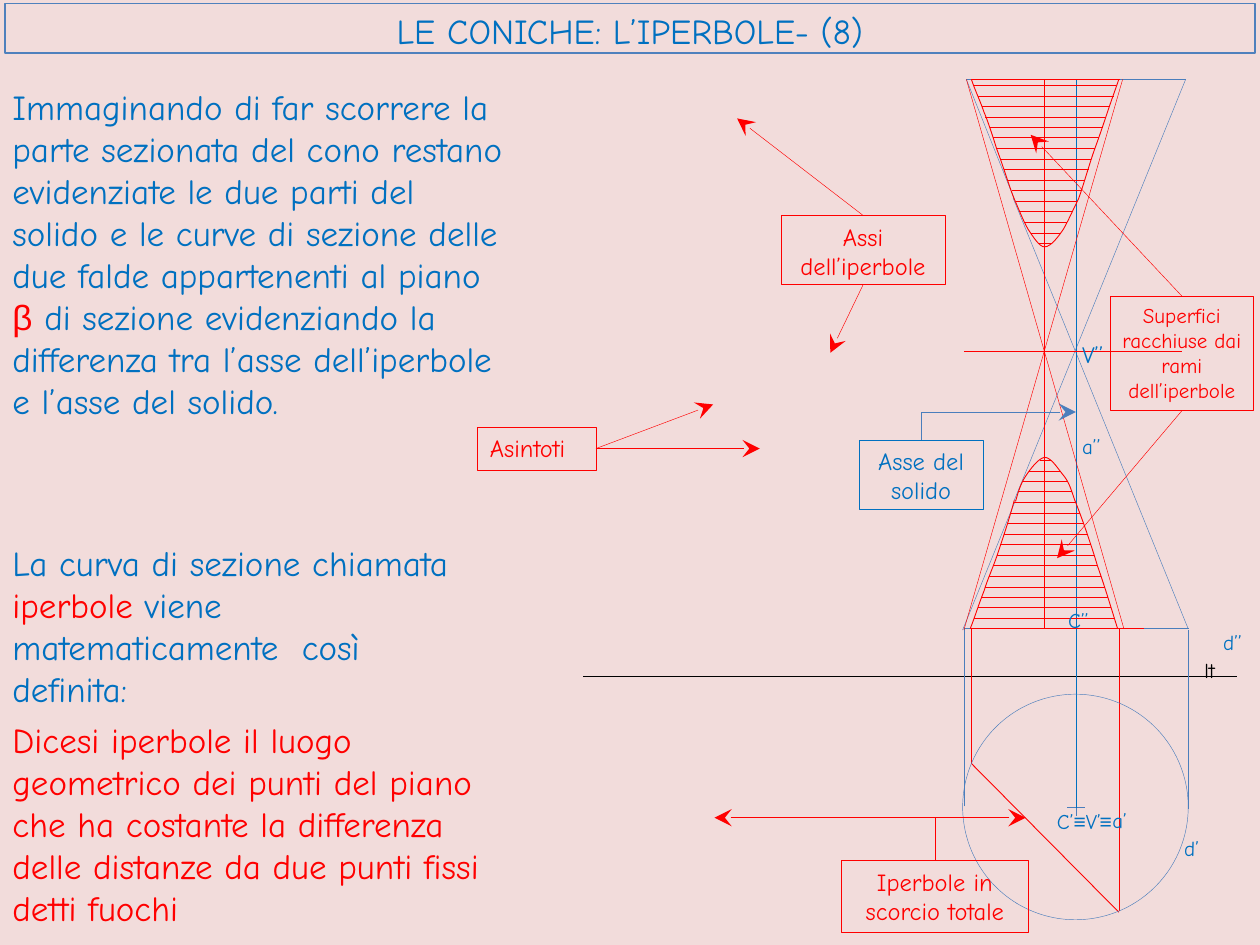
from lxml import etree
from pptx import Presentation
from pptx.dml.color import RGBColor
from pptx.enum.shapes import MSO_CONNECTOR, MSO_SHAPE
from pptx.enum.text import MSO_ANCHOR, PP_ALIGN
from pptx.oxml.ns import qn
from pptx.util import Inches, Pt

STRAIGHT, ELBOW = MSO_CONNECTOR.STRAIGHT, MSO_CONNECTOR.ELBOW
RECTANGLE, ARC = MSO_SHAPE.RECTANGLE, MSO_SHAPE.ARC
TOP, LEFT, CENTER = MSO_ANCHOR.TOP, PP_ALIGN.LEFT, PP_ALIGN.CENTER
COLORS = {"background": "F2DCDB", "red": "FF0000", "blue": "0070C0",
          "steel": "4B7EBC", "frame": "4F81BD", "black": "000000"}
FONT, SYMBOL_FONT = "Comic Neue", "Arial"

deck = Presentation()
deck.slide_width, deck.slide_height = Inches(10), Inches(7.5)
CELL = deck.slide_width // 1000  # the page is a grid of 1000 columns by 750 rows
page = deck.slides.add_slide(deck.slide_layouts[6])
page.background.fill.solid()
page.background.fill.fore_color.rgb = RGBColor.from_string(COLORS["background"])


def outline(shape, color, width):
    shape.line.color.rgb = RGBColor.from_string(COLORS[color])
    shape.line.width = Pt(width)


def connect(start, end, color, width=0.25, arrow=None, kind=STRAIGHT):
    """Draw a connector; arrow is None, "headEnd" or "tailEnd"."""
    connector = page.shapes.add_connector(kind, *[n * CELL for n in start + end])
    outline(connector, color, width)
    properties = connector._element.spPr
    if kind == ELBOW:
        properties.find(qn("a:prstGeom")).set("prst", "bentConnector2")
    if arrow:
        line = properties.find(qn("a:ln"))
        etree.SubElement(line, qn("a:" + arrow), type="stealth", w="lg", len="lg")
    etree.SubElement(properties, qn("a:effectLst"))


# Ground line, cone, axes, asymptotes and projection lines
for color, width, start, end in [
    ("black", 0.25, (463, 537), (982, 537)),
    ("steel", 0.25, (943, 642), (943, 500)),
    ("steel", 0.25, (941, 63), (805, 397)),
    ("steel", 0.25, (804, 157), (943, 499)),
    ("steel", 0.25, (767, 63), (805, 158)),
    ("steel", 0.25, (806, 397), (764, 500)),
    ("steel", 0.25, (765, 640), (765, 499)),
    ("steel", 0.5, (767, 63), (888, 63)),
    ("steel", 0.5, (888, 63), (941, 63)),
    ("steel", 0.5, (765, 499), (889, 499)),
    ("steel", 0.5, (889, 499), (944, 499)),
    ("steel", 0.25, (847, 641), (861, 641)),
    ("steel", 0.25, (854, 634), (854, 648)),
    ("blue", 0.25, (854, 63), (854, 279)),
    ("blue", 0.25, (854, 279), (854, 499)),
    ("blue", 0.25, (854, 499), (854, 551)),
    ("blue", 0.25, (854, 551), (854, 641)),
    ("red", 0.25, (829, 63), (829, 499)),
    ("red", 0.25, (765, 279), (938, 279)),
    ("red", 0.25, (767, 63), (892, 499)),
    ("red", 0.25, (891, 63), (765, 500)),
    ("red", 0.5, (771, 63), (889, 63)),
    ("red", 0.5, (771, 499), (888, 499)),
    ("red", 0.25, (771, 499), (908, 499)),
    ("red", 0.5, (771, 606), (888, 724)),
    ("red", 0.25, (771, 499), (771, 606)),
    ("red", 0.25, (888, 499), (888, 723)),
]:
    connect(start, end, color, width)

# Base circle in plan, as two arcs
for angles in [(121.28, 40.23), (39.96, 121.58)]:
    arc = page.shapes.add_shape(ARC, 764 * CELL, 551 * CELL, 179 * CELL, 179 * CELL)
    arc.adjustments[0], arc.adjustments[1] = [angle * 0.6 for angle in angles]
    arc.fill.background()
    arc.shadow.inherit = False
    outline(arc, "steel", 0.25)

# Branches of the hyperbola, each in a front and a hidden part:
# a start point, then two controls and an end per cubic
UPPER = [[(888, 63), (885, 72), (882, 80), (879, 89), (876, 98), (873, 107), (869, 118),
          (865, 129), (860, 147), (856, 158), (851, 168), (848, 175), (844, 182),
          (840, 188), (834, 196), (829, 196), (825, 196), (820, 188), (816, 182),
          (812, 175), (809, 167), (805, 158)],
         [(771, 63), (774, 72), (778, 80), (781, 89), (785, 98), (791, 118), (791, 118),
          (796, 131), (800, 145), (805, 158)]]
LOWER = [[(887, 499), (882, 483), (877, 466), (871, 449), (866, 432), (858, 409), (853, 397),
          (849, 385), (848, 382), (843, 376), (839, 371), (834, 363), (829, 363),
          (824, 364), (818, 372), (814, 378), (810, 384), (808, 391), (806, 398)],
         [(770, 499), (774, 489), (777, 479), (781, 469), (784, 459), (788, 451), (792, 439),
          (796, 427), (801, 412), (805, 397)]]
STEPS, HATCHES, HATCH_GAP = 8, 16, 8.37
for parts, first_row in [(UPPER, 67.5), (LOWER, 365.2)]:
    chords = []
    for controls in parts:
        corners = [(x * CELL, y * CELL) for x, y in controls]
        builder = page.shapes.build_freeform(*corners[0])
        builder.add_line_segments(corners[1:], close=False)
        branch = builder.convert_to_shape()
        branch.fill.background()
        branch.shadow.inherit = False
        outline(branch, "red", 0.5)

        # Turn every three straight segments into one cubic
        segments = list(branch._element.iter(qn("a:lnTo")))
        for index in range(0, len(segments), 3):
            cubic = etree.Element(qn("a:cubicBezTo"))
            segments[index].addprevious(cubic)
            for segment in segments[index:index + 3]:
                cubic.append(segment[0])
                segment.getparent().remove(segment)

        curve = [controls[0]]
        for index in range(0, len(controls) - 1, 3):
            a, b, c, d = controls[index:index + 4]
            for t in [step / STEPS for step in range(1, STEPS + 1)]:
                u = 1 - t
                curve.append([
                    u**3 * a[i] + 3 * u * u * t * b[i] + 3 * u * t * t * c[i] + t**3 * d[i]
                    for i in (0, 1)])
        chords += zip(curve, curve[1:])

    for hatch in range(HATCHES):
        row = first_row + hatch * HATCH_GAP
        crossings = [x1 + (x2 - x1) * (row - y1) / (y2 - y1)
                     for (x1, y1), (x2, y2) in chords if (y1 - row) * (y2 - row) < 0]
        connect((round(min(crossings)), round(row)),
                (round(max(crossings)), round(row)), "red")

# Arrows from the captions
for start, end in [
    ((473, 356), (566, 321)), ((473, 356), (603, 356)),
    ((685, 226), (659, 280)), ((685, 171), (585, 94)),
    ((938, 326), (839, 443)), ((938, 235), (818, 107)),
]:
    connect(start, end, "red", arrow="tailEnd")
for tip, caption, color in [
    ((854, 327), (731, 349), "steel"),
    ((814, 649), (742, 683), "red"),
    ((567, 649), (742, 683), "red"),
]:
    connect(tip, caption, color, arrow="headEnd", kind=ELBOW)

# Texts: place, frame colour and width, alignment, size, spans of (text, colour)
TEXTS = [
    ((4, 3, 992, 39), ("frame", 0.75), CENTER, 20, [("LE CONICHE: L’IPERBOLE- (8)", "blue")]),
    ((0, 63, 409, 287), None, LEFT, 20, [
        ("Immaginando di far scorrere la parte sezionata del cono restano evidenziate "
         "le due parti del solido e le curve di sezione delle due falde appartenenti "
         "al piano ", "blue"),
        ("β", "red"),
        (" di sezione evidenziando la differenza tra l’asse dell’iperbole e l’asse "
         "del solido.", "blue")]),
    ((0, 425, 385, 111), None, LEFT, 20, [
        ("La curva di sezione chiamata ", "blue"), ("iperbole", "red"),
        (" viene matematicamente  così definita:", "blue")]),
    ((0, 565, 425, 187), None, LEFT, 20, [
        ("Dicesi iperbole il luogo geometrico dei punti del piano che ha costante la "
         "differenza delle distanze da due punti fissi detti fuochi", "red")]),
    ((379, 339, 94, 34), ("red", 0.25), LEFT, 14, [("Asintoti", "red")]),
    ((620, 171, 130, 55), ("red", 0.25), CENTER, 14, [("Assi dell’iperbole", "red")]),
    ((682, 349, 98, 55), ("blue", 0.25), CENTER, 14, [("Asse del solido", "blue")]),
    ((881, 235, 114, 91), ("red", 0.25), CENTER, 12,
     [("Superfici racchiuse dai rami dell’iperbole", "red")]),
    ((668, 683, 148, 57), ("red", 0.25), CENTER, 14, [("Iperbole in scorcio totale", "red")]),
    ((838, 477, 40, 21), None, LEFT, 12, [("C’’", "blue")]),
    ((829, 637, 62, 35), None, LEFT, 12, [("C’", "blue"), ("≡", "blue"), ("V’", "blue")]),
    ((863, 637, 30, 35), None, LEFT, 12, [("≡", "blue")]),
    ((873, 636, 36, 21), None, LEFT, 12, [("a’", "blue")]),
    ((849, 265, 39, 23), None, LEFT, 13.5, [("V’’", "blue")]),
    ((946, 517, 35, 21), None, LEFT, 12, [("lt", "black")]),
    ((961, 495, 39, 21), None, LEFT, 12, [("d’’", "blue")]),
    ((930, 658, 35, 21), None, LEFT, 12, [("d’", "blue")]),
    ((849, 339, 36, 21), None, LEFT, 12, [("a’’", "blue")]),
]
for place, frame, alignment, size, spans in TEXTS:
    place = [n * CELL for n in place]
    if frame:
        box = page.shapes.add_shape(RECTANGLE, *place)
        box.fill.background()
        box.shadow.inherit = False
        outline(box, *frame)
    else:
        box = page.shapes.add_textbox(*place)
    box.text_frame.word_wrap = True
    box.text_frame.vertical_anchor = TOP
    para = box.text_frame.paragraphs[0]
    para.alignment = alignment
    for text, color in spans:
        span = para.add_run()
        span.text = text
        span.font.name = SYMBOL_FONT if text in "β≡" else FONT
        span.font.size = Pt(size)
        span.font.color.rgb = RGBColor.from_string(COLORS[color])

deck.save("out.pptx")
